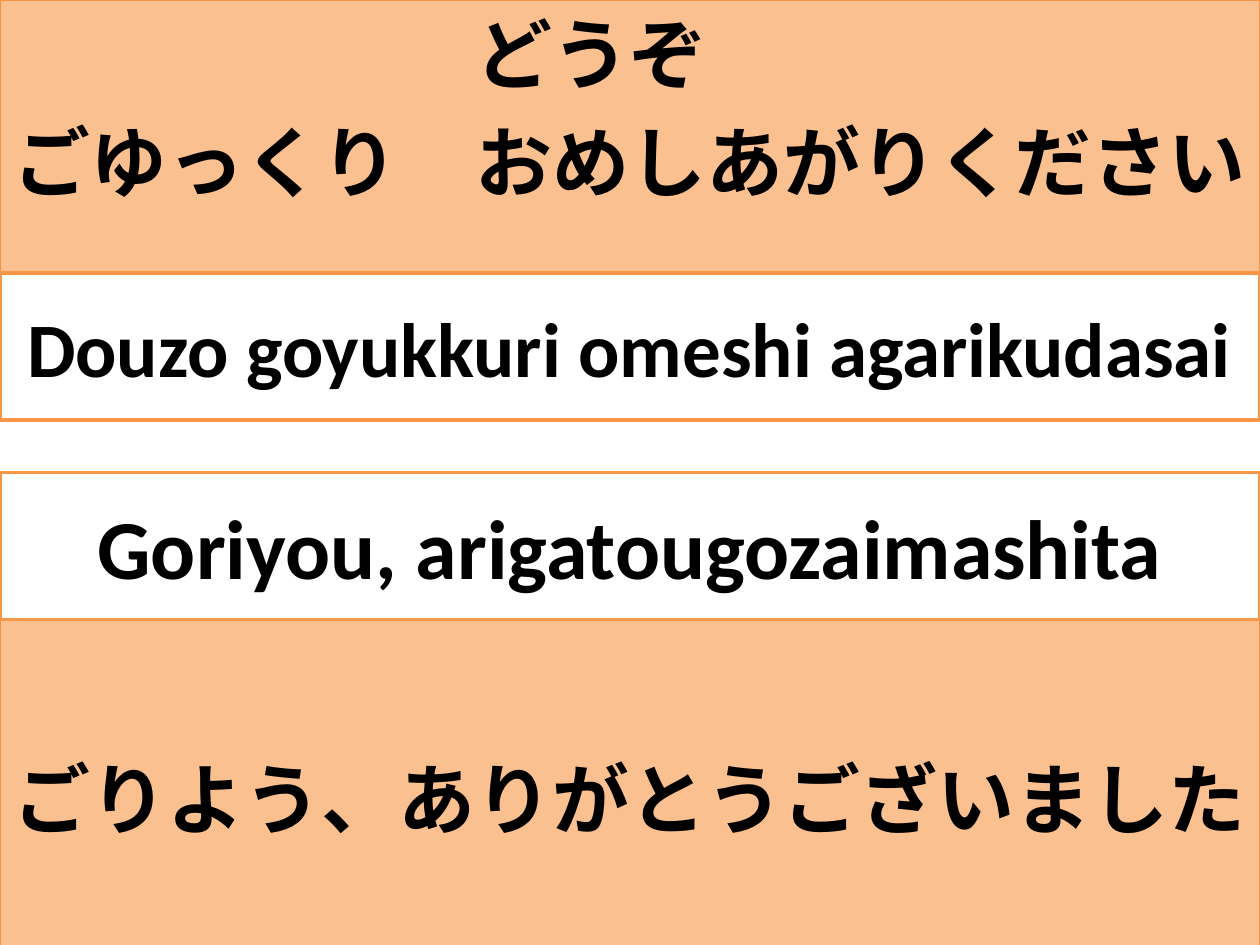
from lxml.etree import SubElement
from pptx import Presentation
from pptx.dml.color import RGBColor
from pptx.enum.shapes import MSO_SHAPE as Shape
from pptx.enum.text import MSO_ANCHOR as Anchor, MSO_AUTO_SIZE as AutoSize, PP_ALIGN as Align
from pptx.oxml.ns import qn
from pptx.util import Inches, Pt

COLORS = {"peach": "FAC090", "peach_edge": "F69240", "white": "FFFFFF",
          "orange": "F79646", "ink": "000000"}
WIDTH, HEIGHT, ROWS = 10, 7.5, 18
ROW = HEIGHT / ROWS


def color(name):
    return RGBColor.from_string(COLORS[name])


def place(band, top, rows):
    band.left, band.top = Inches(0), Inches(top * ROW)
    band.width, band.height = Inches(WIDTH), Inches(rows * ROW)


def paint(band, fill, edge, weight):
    band.fill.solid()
    band.fill.fore_color.rgb = color(fill)
    band.line.color.rgb = color(edge)
    band.line.width = Pt(weight)


def write(band, lines, size, anchor, top_inset=0.05):
    frame = band.text_frame
    frame.word_wrap = True
    frame.auto_size = AutoSize.NONE
    frame.vertical_anchor = anchor
    frame.margin_top = Inches(top_inset)
    for index, line in enumerate(lines):
        paragraph = frame.paragraphs[0] if index == 0 else frame.add_paragraph()
        properties = paragraph._p.get_or_add_pPr()
        properties.set("marL", "0")
        properties.set("indent", "0")
        SubElement(properties, qn("a:buNone"))
        paragraph.alignment = Align.CENTER
        paragraph.space_before = Pt(0.2 * size if index else 0)
        run = paragraph.add_run()
        run.text = line
        run.font.name = "Calibri"
        run.font.size = Pt(size)
        run.font.bold = True
        run.font.color.rgb = color("ink")


def add_band(slide, top, rows):
    band = slide.shapes.add_shape(Shape.RECTANGLE, 0, 0, 0, 0)
    band.shadow.inherit = False
    place(band, top, rows)
    return band


def japanese_band(band, lines, top_inset=0.05):
    paint(band, "peach", "peach_edge", 0.75)
    write(band, lines, 44, Anchor.TOP, top_inset)


def romaji_band(slide, top, phrase, size):
    band = add_band(slide, top, 2.8)
    paint(band, "white", "orange", 2)
    write(band, [phrase], size, Anchor.MIDDLE)


def main():
    deck = Presentation()
    deck.slide_width, deck.slide_height = Inches(WIDTH), Inches(HEIGHT)
    slide = deck.slides.add_slide(deck.slide_layouts[1])
    title, invitation = slide.placeholders
    title.element.getparent().remove(title.element)

    place(invitation, 0, 7)
    japanese_band(invitation, ["どうぞ\u3000".replace("\u3000", "　"), "ごゆっくり　おめしあがりください"])
    thanks = add_band(slide, 10, 8.1)
    japanese_band(thanks, ["ごりよう、ありがとうございました"], 1.8)
    romaji_band(slide, 5.2, "Douzo goyukkuri omeshi agarikudasai", 44)
    romaji_band(slide, 9, "Goriyou, arigatougozaimashita", 48)
    deck.save("out.pptx")


if __name__ == "__main__":
    main()
